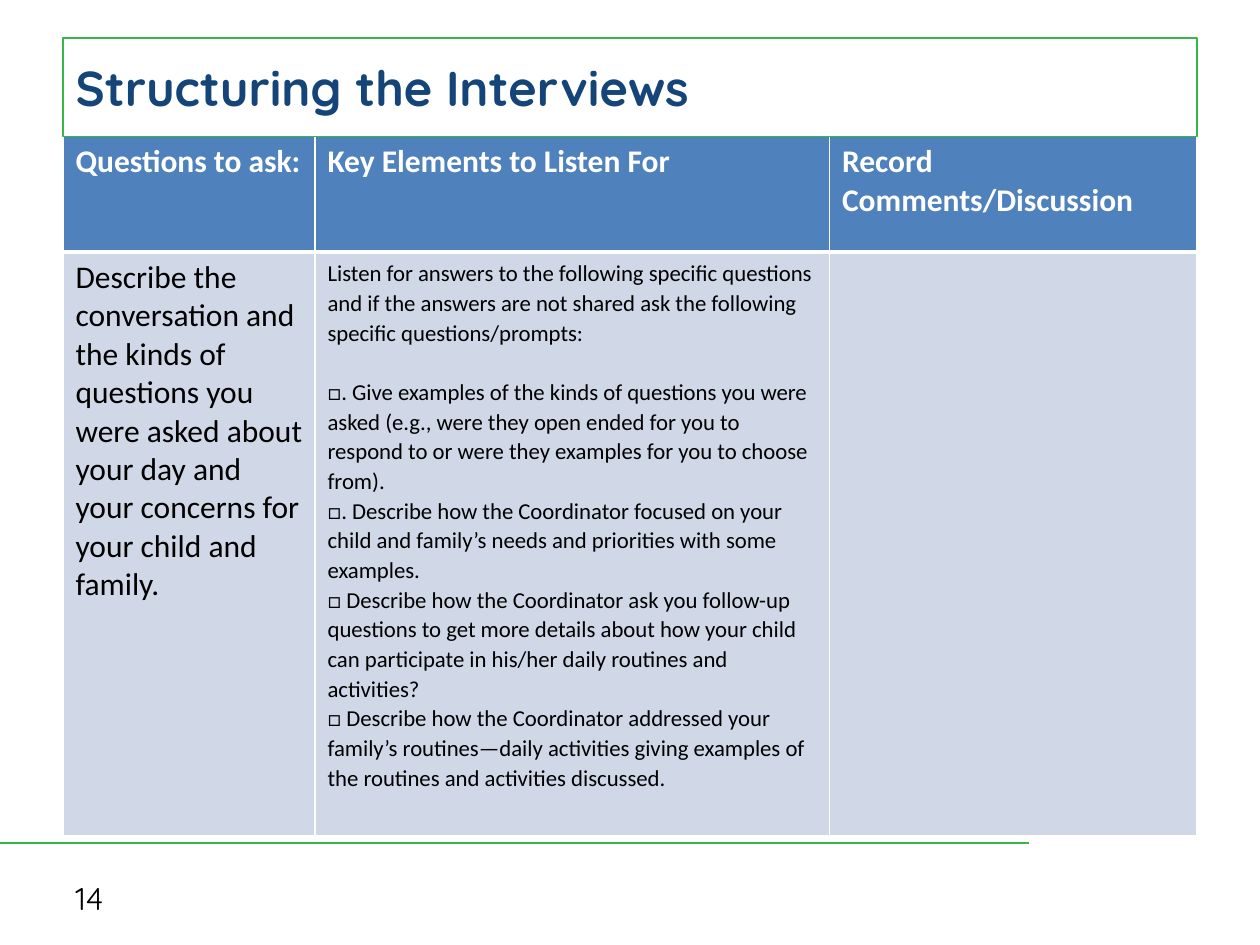
from lxml.etree import SubElement
from pptx import Presentation
from pptx.dml.color import RGBColor
from pptx.enum.shapes import MSO_CONNECTOR
from pptx.enum.text import MSO_ANCHOR, PP_ALIGN
from pptx.oxml.ns import qn
from pptx.util import Pt

COLORS = {
    "green": "39B54A", "navy": "154578", "blue": "4F81BD",
    "pale": "D0D8E8", "white": "FFFFFF", "black": "000000",
}
TITLE = {"name": "Quicksand", "size": Pt(28), "bold": True}
NUMBER = {"name": "Quicksand", "size": Pt(18), "bold": False}
HEADER = {"name": "Calibri", "size": Pt(18), "bold": True}
QUESTION = {"name": "Calibri", "size": Pt(18), "bold": False}
PROMPT = {"name": "Calibri", "size": Pt(13), "bold": False}

HEADINGS = ["Questions to ask:", "Key Elements to Listen For", "Record Comments/Discussion"]
ASK = ("Describe the conversation and the kinds of questions you were asked "
       "about your day and your concerns for your child and family.")
PROMPTS = [
    "Listen for answers to the following specific questions and if the answers "
    "are not shared ask the following specific questions/prompts:",
    "□. Give examples of the kinds of questions you were asked (e.g., were they "
    "open ended for you to respond to or were they examples for you to choose from).",
    "□. Describe how the Coordinator focused on your child and family’s needs and "
    "priorities with some examples.",
    "□ Describe how the Coordinator ask you follow-up questions to get more details "
    "about how your child can participate in his/her daily routines and activities?",
    "□ Describe how the Coordinator addressed your family’s routines—daily activities "
    "giving examples of the routines and activities discussed.",
]


def rgb(color):
    return RGBColor.from_string(COLORS[color])


class SlideBuilder:
    def __init__(self, slide):
        self.s = slide

    def paragraphs(self, tf, lines, style, color):
        for i, line in enumerate(lines):
            p = tf.paragraphs[0] if i == 0 else tf.add_paragraph()
            p.alignment = PP_ALIGN.LEFT
            r = p.add_run()
            r.text = line
            for name, value in style.items():
                setattr(r.font, name, value)
            r.font.color.rgb = rgb(color)

    def rule(self, x1, x2, y):
        c = self.s.shapes.add_connector(MSO_CONNECTOR.STRAIGHT, Pt(x1), Pt(y), Pt(x2), Pt(y))
        c.line.color.rgb = rgb("green")
        c.line.width = Pt(1.5)
        SubElement(c.element.spPr, qn("a:effectLst"))

    def table(self, x, y, widths, heights):
        tbl = self.s.shapes.add_table(len(heights), len(widths), Pt(x), Pt(y),
                                      Pt(sum(widths)), Pt(sum(heights))).table
        for col, width in zip(tbl.columns, widths):
            col.width = Pt(width)
        for row, height in zip(tbl.rows, heights):
            row.height = Pt(height)
        return tbl

    def cell(self, cell, fill, top=1, bottom=1):
        tc_pr = cell._tc.get_or_add_tcPr()
        for side, width in {"L": 1, "R": 1, "T": top, "B": bottom}.items():
            ln = SubElement(tc_pr, qn(f"a:ln{side}"), w=str(Pt(width)))
            line_fill = SubElement(ln, qn("a:solidFill"))
            SubElement(line_fill, qn("a:srgbClr"), val=COLORS["white"])
        cell.fill.solid()
        cell.fill.fore_color.rgb = rgb(fill)

    def title(self, text, x, y, w, h):
        sp = self.s.shapes.title
        sp.left, sp.top, sp.width, sp.height = Pt(x), Pt(y), Pt(w), Pt(h)
        sp.element.getparent().append(sp.element)
        sp.line.color.rgb = rgb("green")
        sp.line.width = Pt(1)
        sp.text_frame.vertical_anchor = MSO_ANCHOR.MIDDLE
        self.paragraphs(sp.text_frame, [text], TITLE, "navy")

    def text(self, text, x, y, w, h):
        tf = self.s.shapes.add_textbox(Pt(x), Pt(y), Pt(w), Pt(h)).text_frame
        tf.word_wrap = True
        tf.vertical_anchor = MSO_ANCHOR.MIDDLE
        self.paragraphs(tf, [text], NUMBER, "black")


def main():
    prs = Presentation()
    prs.slide_width, prs.slide_height = Pt(720), Pt(540)
    b = SlideBuilder(prs.slides.add_slide(prs.slide_layouts[5]))

    b.rule(0, 588, 481.8)
    tbl = b.table(36, 78, [144, 294, 210], [66, 333.5])
    for col, heading in enumerate(HEADINGS):
        header, body = tbl.cell(0, col), tbl.cell(1, col)
        b.cell(header, "blue", bottom=3)
        b.cell(body, "pale", top=3)
        b.paragraphs(header.text_frame, [heading], HEADER, "white")
    b.paragraphs(tbl.cell(1, 0).text_frame, [ASK], QUESTION, "black")
    prompts = tbl.cell(1, 1).text_frame
    b.paragraphs(prompts, PROMPTS, PROMPT, "black")
    for p in prompts.paragraphs:
        p.line_spacing = 1.07
    prompts.paragraphs[1].space_before = Pt(17)

    b.title("Structuring the Interviews", 36, 21.6, 648, 56.4)
    b.text("14", 36, 498.5, 168, 28.8)
    prs.save("out.pptx")


if __name__ == "__main__":
    main()
